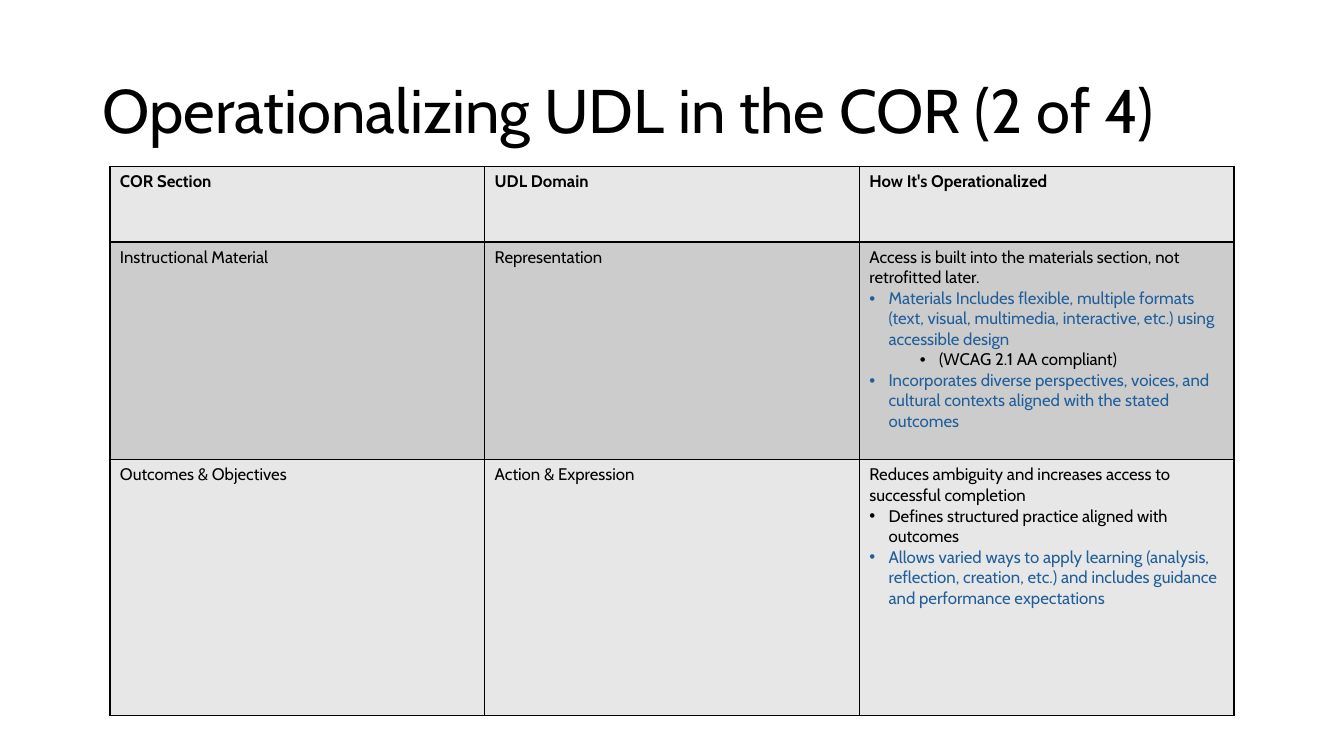
from lxml.etree import SubElement
from pptx import Presentation
from pptx.dml.color import RGBColor
from pptx.enum.text import MSO_ANCHOR
from pptx.oxml.ns import qn
from pptx.util import Inches, Pt

FONT = "Cabin"
BLACK, BLUE = "000000", "215F9A"
FILLS = ["E7E7E7", "CCCCCC"]
HEIGHTS = [0.75, 2.16, 2.54]

ROWS = [
    ["COR Section", "UDL Domain", "How It's Operationalized"],
    ["Instructional Material", "Representation", [
        ("Access is built into the materials section, not retrofitted later.", None, BLACK),
        ("Materials Includes flexible, multiple formats (text, visual, multimedia, "
         "interactive, etc.) using accessible design", 0, BLUE),
        ("(WCAG 2.1 AA compliant)", 1, BLACK),
        ("Incorporates diverse perspectives, voices, and cultural contexts aligned "
         "with the stated outcomes", 0, BLUE),
    ]],
    ["Outcomes & Objectives", "Action & Expression", [
        ("Reduces ambiguity and increases access to successful completion", None, BLACK),
        ("Defines structured practice aligned with outcomes", 0, BLACK),
        ("Allows varied ways to apply learning (analysis, reflection, creation, etc.) "
         "and includes guidance and performance expectations", 0, BLUE),
    ]],
]


def color(code):
    return RGBColor.from_string(code)


def add_run(para, text, size, code=BLACK, bold=False):
    run = para.add_run()
    run.text = text
    font = run.font
    font.name, font.size, font.bold = FONT, Pt(size), bold
    font.color.rgb = color(code)


def add_bullet(para, level):
    para.level = level
    props = para._p.get_or_add_pPr()
    props.set("marL", str(Inches(0.19 + 0.5 * level)))
    props.set("indent", str(Inches(-0.19)))
    SubElement(props, qn("a:buFont"), typeface="Arial")
    SubElement(props, qn("a:buChar"), char="•")


def add_border(cell):
    props = cell._tc.get_or_add_tcPr()
    for side in ("lnL", "lnR", "lnT", "lnB"):
        line = SubElement(props, qn(f"a:{side}"), w=str(Pt(1)))
        fill = SubElement(line, qn("a:solidFill"))
        SubElement(fill, qn("a:srgbClr"), val=BLACK)


def fill_cell(cell, content, code, bold):
    add_border(cell)
    cell.fill.solid()
    cell.fill.fore_color.rgb = color(code)
    items = [(content, None, BLACK)] if isinstance(content, str) else content
    frame = cell.text_frame
    for i, (text, level, ink) in enumerate(items):
        para = frame.add_paragraph() if i else frame.paragraphs[0]
        if level is not None:
            add_bullet(para, level)
        add_run(para, text, 12, ink, bold)


def add_title(slide, left, top, width, height):
    box = slide.shapes.add_textbox(Inches(left), Inches(top), Inches(width), Inches(height))
    frame = box.text_frame
    frame.word_wrap = True
    frame.vertical_anchor = MSO_ANCHOR.MIDDLE
    para = frame.paragraphs[0]
    para.line_spacing = 0.9
    add_run(para, "Operationalizing UDL in the COR (2 of 4)", 44)


def add_grid(slide, left, top, width, height):
    count = len(ROWS[0])
    table = slide.shapes.add_table(
        len(ROWS), count, Inches(left), Inches(top), Inches(width), Inches(height)
    ).table
    for col in table.columns:
        col.width = Inches(width / count)
    for r, row in enumerate(ROWS):
        table.rows[r].height = Inches(height * HEIGHTS[r] / sum(HEIGHTS))
        for c, content in enumerate(row):
            fill_cell(table.cell(r, c), content, FILLS[r % 2], r == 0)


def main():
    deck = Presentation()
    deck.slide_width, deck.slide_height = Inches(13.33), Inches(7.5)
    slide = deck.slides.add_slide(deck.slide_layouts[6])
    add_title(slide, 0.92, 0.4, 11.5, 1.45)
    add_grid(slide, 1.09, 1.65, 11.15, 5.45)
    deck.save("out.pptx")


if __name__ == "__main__":
    main()
